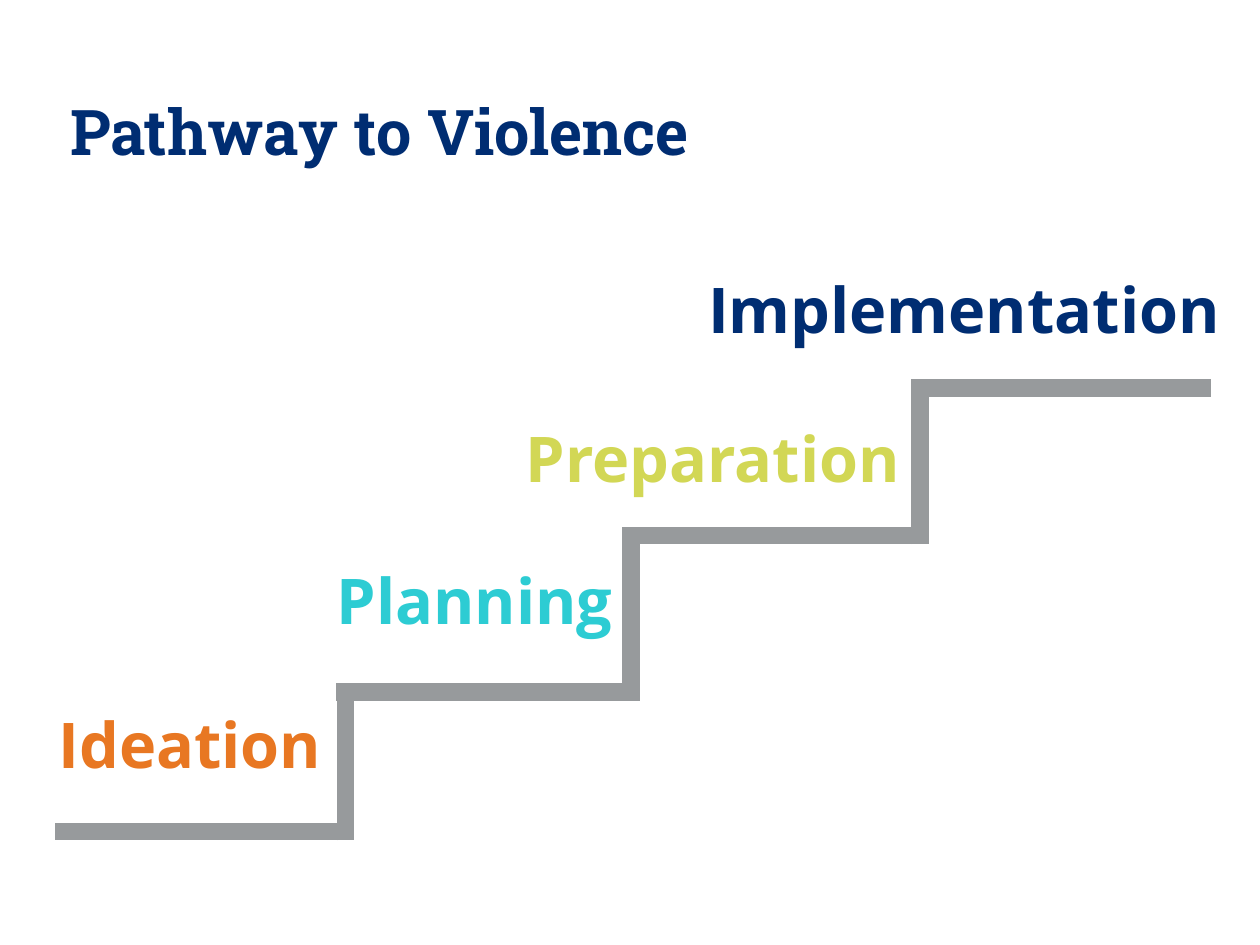
from pptx import Presentation
from pptx.dml.color import RGBColor
from pptx.enum.shapes import MSO_CONNECTOR
from pptx.enum.text import MSO_ANCHOR, PP_ALIGN
from pptx.util import Pt
from lxml import etree

STRAIGHT = MSO_CONNECTOR.STRAIGHT
TOP, MIDDLE = MSO_ANCHOR.TOP, MSO_ANCHOR.MIDDLE
LEFT, RIGHT = PP_ALIGN.LEFT, PP_ALIGN.RIGHT
DRAWING_NS = "http://schemas.openxmlformats.org/drawingml/2006/main"

COLORS = {
    "navy": "002D72",
    "orange": "E87722",
    "teal": "2DCCD3",
    "lime": "D2D755",
    "gray": "979A9C",
}
STAIR_WEIGHT = 10
LABEL_HEIGHT = 51

# Horizontal bounds of the steps; the inner ones are the risers.
STEP_EDGES = [36.5, 197.3, 360.7, 525.6, 687]
# Label, colour, label left, label top, label width, tread height on the page
STEPS = [
    ("Ideation", "orange", 20.9, 399.6, 169.9, 475.2),
    ("Planning", "teal", 168.5, 317.5, 188.6, 395.3),
    ("Preparation", "lime", 270.7, 236.2, 250.6, 306),
    ("Implementation", "navy", 388.8, 151.2, 315.4, 221.8),
]


def add_text(page, text, bounds, color, font_name, anchor=TOP, align=LEFT, line_spacing=1.0):
    box = page.shapes.add_textbox(*(Pt(value) for value in bounds))
    frame = box.text_frame
    frame.word_wrap = True
    frame.vertical_anchor = anchor
    para = frame.paragraphs[0]
    para.alignment = align
    para.line_spacing = line_spacing
    span = para.add_run()
    span.text = text
    for name, value in {"name": font_name, "size": Pt(36), "bold": True}.items():
        setattr(span.font, name, value)
    span.font.color.rgb = RGBColor.from_string(COLORS[color])


def add_stair_line(page, x1, y1, x2, y2):
    line = page.shapes.add_connector(STRAIGHT, Pt(x1), Pt(y1), Pt(x2), Pt(y2))
    line.line.width = Pt(STAIR_WEIGHT)
    line.line.color.rgb = RGBColor.from_string(COLORS["gray"])
    etree.SubElement(line._element.spPr, f"{{{DRAWING_NS}}}effectLst")


def add_staircase(page):
    """Draw treads and risers, each overlapping its neighbour by half a line width."""
    overlap = STAIR_WEIGHT / 2
    heights = [step[-1] for step in STEPS]
    for left, right, y in zip(STEP_EDGES, STEP_EDGES[1:], heights):
        add_stair_line(page, left - overlap, y, right + overlap, y)
    for x, lower, upper in zip(STEP_EDGES[1:], heights, heights[1:]):
        add_stair_line(page, x, lower + overlap, x, upper - overlap)


def main():
    deck = Presentation()
    deck.slide_width, deck.slide_height = Pt(720), Pt(540)
    page = deck.slides.add_slide(deck.slide_layouts[6])
    add_text(page, "Pathway to Violence", (33.1, 28.8, 457.9, 97.2), "navy",
             "Roboto Slab", anchor=MIDDLE, line_spacing=0.9)
    add_staircase(page)
    for label, color, left, top, width, _ in STEPS:
        add_text(page, label, (left, top, width, LABEL_HEIGHT), color,
                 "Open Sans", align=RIGHT)
    deck.save("out.pptx")


if __name__ == "__main__":
    main()
